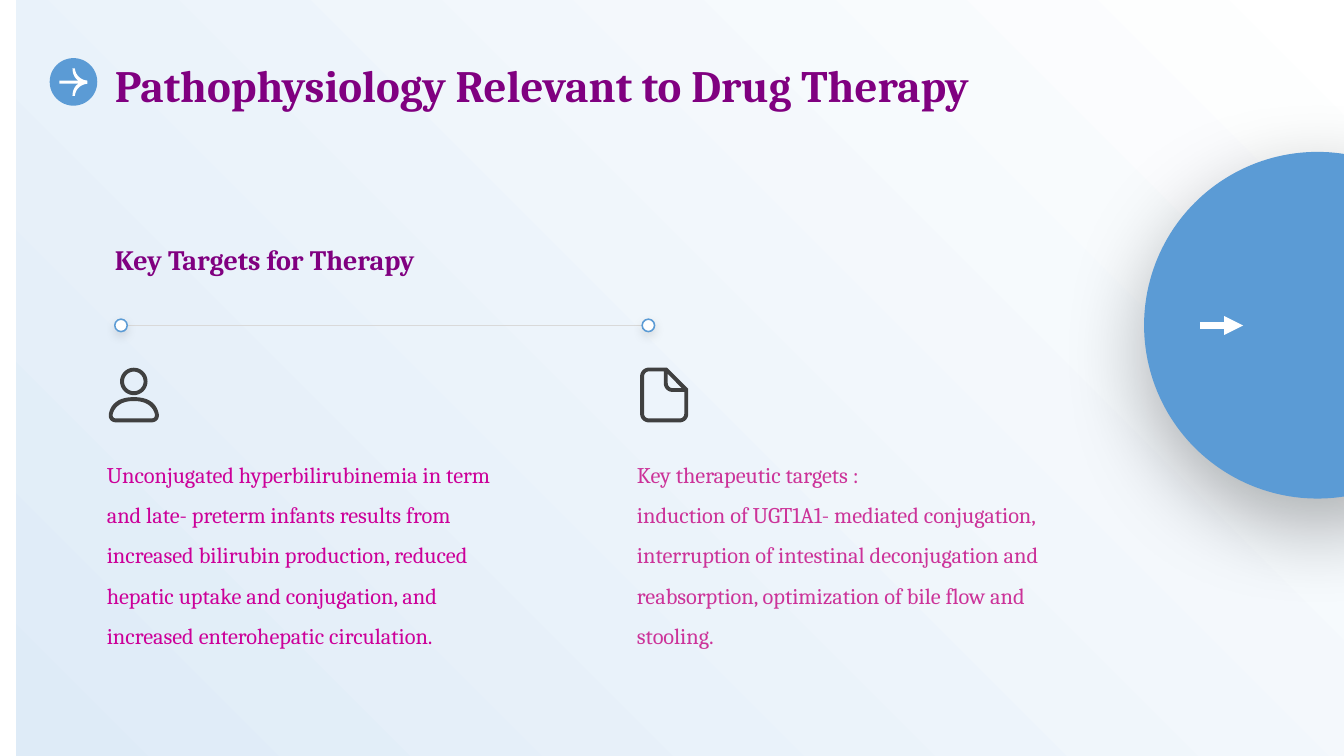
import math
from dataclasses import dataclass

from lxml import etree
from pptx import Presentation
from pptx import util as u
from pptx.dml.color import RGBColor
from pptx.enum import shapes, text
from pptx.oxml import ns

Point = tuple[float, float]
Contour = list[Point]

BLUE, WHITE, DARK, PURPLE = "5B9BD5", "FFFFFF", "404040", "800080"
FONT = "Cambria"
CURVE_STEPS = 10
PERSON_AXIS = 95.6
ARROW_AXIS = 58.7
TIMELINE_Y = 232.5


@dataclass
class Shadow:
    opacity: int
    blur: float
    distance: float


@dataclass
class Circle:
    left: float
    top: float
    size: float
    fill: str
    outline: str | None = None
    shadow: Shadow | None = None


@dataclass
class Line:
    start: float
    end: float
    color: str
    width: float
    arrow: bool = False


@dataclass
class Icon:
    contours: list[Contour]
    color: str


@dataclass
class Column:
    left: float
    width: float
    color: str
    paragraphs: list[str]


def rgb(value: str) -> RGBColor:
    return RGBColor.from_string(value)


def add_effects(properties, shadow: Shadow | None) -> None:
    effects = etree.SubElement(properties, ns.qn("a:effectLst"))
    if shadow:
        outer = etree.SubElement(
            effects, ns.qn("a:outerShdw"), blurRad=str(u.Pt(shadow.blur)),
            dist=str(u.Pt(shadow.distance)), dir="5400000", algn="t", rotWithShape="0")
        color = etree.SubElement(outer, ns.qn("a:srgbClr"), val="000000")
        etree.SubElement(color, ns.qn("a:alpha"), val=str(shadow.opacity * 1000))


def add_background(slide) -> None:
    shape = slide.shapes.add_shape(
        shapes.MSO_SHAPE.RECTANGLE, u.Pt(11.5), u.Pt(0), u.Pt(960), u.Pt(540))
    shape.shadow.inherit = False
    shape.line.fill.background()
    shape.fill.gradient()
    shape.fill.gradient_angle = 225
    for stop, color, position in zip(shape.fill.gradient_stops, (WHITE, "DEEBF7"), (0, 1)):
        stop.color.rgb = rgb(color)
        stop.position = position


def add_circle(slide, circle: Circle) -> None:
    shape = slide.shapes.add_shape(
        shapes.MSO_SHAPE.OVAL, u.Pt(circle.left), u.Pt(circle.top),
        u.Pt(circle.size), u.Pt(circle.size))
    shape.fill.solid()
    shape.fill.fore_color.rgb = rgb(circle.fill)
    if circle.outline:
        shape.line.color.rgb = rgb(circle.outline)
        shape.line.width = u.Pt(1.1)
    else:
        shape.line.fill.background()
    add_effects(shape.element.spPr, circle.shadow)


def add_line(slide, line: Line) -> None:
    connector = slide.shapes.add_connector(
        shapes.MSO_CONNECTOR.STRAIGHT, u.Pt(line.start), u.Pt(TIMELINE_Y),
        u.Pt(line.end), u.Pt(TIMELINE_Y))
    connector.line.color.rgb = rgb(line.color)
    connector.line.width = u.Pt(line.width)
    if line.arrow:
        etree.SubElement(connector.line._get_or_add_ln(), ns.qn("a:tailEnd"), type="triangle")
    add_effects(connector.element.spPr, None)


def trace(start: Point, *segments: tuple[float, ...]) -> Contour:
    points = [start]
    for segment in segments:
        if len(segment) == 2:
            points.append(segment)
            continue
        controls = [points[-1], segment[0:2], segment[2:4], segment[4:6]]
        for step in range(1, CURVE_STEPS + 1):
            t = step / CURVE_STEPS
            weights = [math.comb(3, i) * t**i * (1 - t) ** (3 - i) for i in range(4)]
            points.append((sum(w * c[0] for w, c in zip(weights, controls)),
                           sum(w * c[1] for w, c in zip(weights, controls))))
    return points


def ring(center: Point, radius: float) -> Contour:
    angles = [math.tau * step / 40 for step in range(40)]
    return [(center[0] + radius * math.cos(a), center[1] + radius * math.sin(a)) for a in angles]


def mirror_across(half: Contour, axis: float) -> Contour:
    return half + [(2 * axis - x, y) for x, y in reversed(half)]


def mirror_down(half: Contour, axis: float) -> Contour:
    return half + [(x, 2 * axis - y) for x, y in reversed(half)]


def add_icon(slide, icon: Icon) -> None:
    outlines = [[(u.Pt(x), u.Pt(y)) for x, y in contour] for contour in icon.contours]
    builder = slide.shapes.build_freeform(*outlines[0][0])
    for index, outline in enumerate(outlines):
        if index:
            builder.move_to(*outline[0])
        builder.add_line_segments(outline[1:], close=True)
    shape = builder.convert_to_shape()
    shape.shadow.inherit = False
    shape.fill.solid()
    shape.fill.fore_color.rgb = rgb(icon.color)
    shape.line.fill.background()


def add_text(slide, paragraphs: list[str], *, left: float, top: float, width: float,
             height: float, size: float, color: str, spacing: float, bold: bool = False,
             anchor=text.MSO_ANCHOR.TOP, inset_right: float = 0, inset_y: float = 0) -> None:
    frame = slide.shapes.add_textbox(
        u.Pt(left), u.Pt(top), u.Pt(width), u.Pt(height)).text_frame
    frame.word_wrap = True
    frame.vertical_anchor = anchor
    frame.margin_left, frame.margin_right = u.Pt(0), u.Pt(inset_right)
    frame.margin_top = frame.margin_bottom = u.Pt(inset_y)
    for index, words in enumerate(paragraphs):
        paragraph = frame.add_paragraph() if index else frame.paragraphs[0]
        paragraph.line_spacing = spacing
        run = paragraph.add_run()
        run.text = words
        run.font.name = FONT
        run.font.size = u.Pt(size)
        run.font.bold = bold
        run.font.color.rgb = rgb(color)


PERSON = Icon([
    ring((PERSON_AXIS, 272.5), 9.8),
    ring((PERSON_AXIS, 272.5), 7),
    mirror_across(trace((PERSON_AXIS, 283.7), (83.5, 283.7, 79.2, 289.4, 77.9, 295.2),
                        (77, 298.8, 79.2, 301.7, 82.8, 301.7)), PERSON_AXIS),
    mirror_across(trace((PERSON_AXIS, 286.5), (91.5, 286.5, 87.8, 287.2, 84.8, 289.5),
                        (82.6, 291.2, 81.2, 293.2, 80.6, 295.8),
                        (80.2, 297.5, 81, 298.9, 82.8, 298.9)), PERSON_AXIS),
], DARK)

DOCUMENT = Icon([
    trace((463.5, 262.6), (475.9, 262.6), (476.3, 262.6, 476.7, 262.8, 477, 263.1),
          (491.2, 277.3), (491.5, 277.6, 491.6, 278, 491.6, 278.5), (491.6, 295.7),
          (491.6, 299.1, 488.9, 301.7, 485.5, 301.7), (463.5, 301.7),
          (460.1, 301.7, 457.3, 299.1, 457.3, 295.7), (457.3, 268.7),
          (457.3, 265.4, 460.1, 262.6, 463.5, 262.6)),
    trace((477, 273.8), (477, 267.1), (487, 277.2), (480.2, 277.2),
          (478.5, 277.2, 477, 275.6, 477, 273.8)),
    trace((488.8, 295.7), (488.8, 297.5, 487.3, 298.9, 485.5, 298.9), (463.5, 298.9),
          (461.6, 298.9, 460.1, 297.5, 460.1, 295.7), (460.1, 268.7),
          (460.1, 266.9, 461.6, 265.3, 463.5, 265.3), (474.2, 265.3), (474.2, 273.8),
          (474.2, 277.2, 476.9, 279.9, 480.2, 279.9), (488.8, 279.9)),
], DARK)

TITLE_ARROW = Icon([
    mirror_down(trace((42.5, 57.6), (56.1, 57.6), (53.6, 56.2, 51.9, 53, 51.8, 48.9),
                      (53.5, 48.9), (53.9, 53.2, 57, 57, 62.5, 57.6)), ARROW_AXIS),
], WHITE)

COLUMNS = [
    Column(76.3, 316.8, "CC0099", [
        "Unconjugated hyperbilirubinemia in term and late- preterm infants results from "
        "increased bilirubin production, reduced hepatic uptake and conjugation, and "
        "increased enterohepatic circulation."]),
    Column(455, 311, "CC3399", [
        "Key therapeutic targets :",
        "induction of UGT1A1- mediated conjugation, interruption of intestinal "
        "deconjugation and reabsorption, optimization of bile flow and stooling."]),
]


def main() -> None:
    presentation = Presentation()
    presentation.slide_width, presentation.slide_height = u.Pt(960), u.Pt(540)
    slide = presentation.slides.add_slide(presentation.slide_layouts[6])
    add_background(slide)
    add_circle(slide, Circle(817.2, 108.5, 247.6, BLUE, shadow=Shadow(30, 60, 20)))
    add_line(slide, Line(857, 888, WHITE, 4.5, arrow=True))
    add_line(slide, Line(87.8, 467.3, "D9D9D9", 0.82))
    for left in (82, 458.7):
        add_circle(slide, Circle(left, 228, 8.9, WHITE, BLUE, Shadow(11, 7, 3)))
    add_icon(slide, PERSON)
    add_icon(slide, DOCUMENT)
    for column in COLUMNS:
        add_text(slide, column.paragraphs, left=column.left, top=316, width=column.width,
                 height=130.3, size=16, color=column.color, spacing=1.5,
                 inset_right=17.3, inset_y=3.6)
    add_text(slide, ["Key Targets for Therapy"], left=82, top=101.5, width=704, height=95.8,
             size=20, color=PURPLE, spacing=1.5, bold=True, anchor=text.MSO_ANCHOR.BOTTOM)
    add_text(slide, ["Pathophysiology Relevant to Drug Therapy"], left=82, top=41.8,
             width=824.4, height=33.8, size=32, color=PURPLE, spacing=1.1, bold=True,
             anchor=text.MSO_ANCHOR.MIDDLE)
    add_circle(slide, Circle(35.5, 41.5, 34, BLUE))
    add_icon(slide, TITLE_ARROW)
    presentation.save("out.pptx")


if __name__ == "__main__":
    main()
